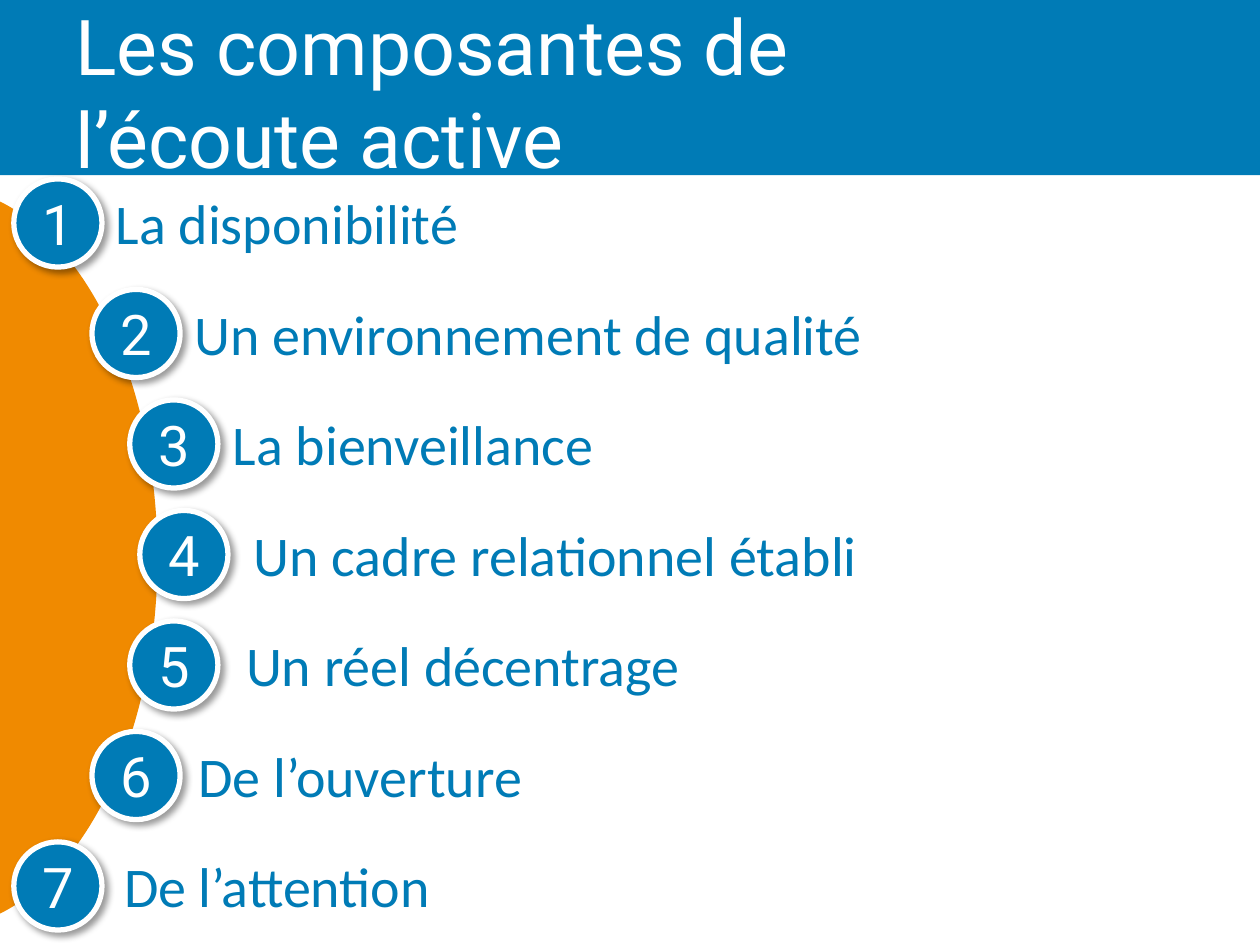
from lxml import etree
from pptx import Presentation
from pptx.dml.color import RGBColor
from pptx.enum.shapes import MSO_SHAPE
from pptx.enum.text import MSO_ANCHOR, MSO_AUTO_SIZE, PP_ALIGN
from pptx.oxml.ns import qn
from pptx.util import Inches, Pt

RECTANGLE, ELLIPSE, ARC = MSO_SHAPE.RECTANGLE, MSO_SHAPE.OVAL, MSO_SHAPE.ARC
LEFT, CENTER = PP_ALIGN.LEFT, PP_ALIGN.CENTER
TOP, MIDDLE = MSO_ANCHOR.TOP, MSO_ANCHOR.MIDDLE
GROW, FIXED = MSO_AUTO_SIZE.SHAPE_TO_FIT_TEXT, MSO_AUTO_SIZE.NONE

WIDTH, HEIGHT = Inches(10), Inches(7.5)
COLUMNS, ROWS = 100, 75
BLUE, ORANGE, WHITE, BLACK = "007BB6", "F08A00", "FFFFFF", "000000"
HEADING_FONT, BODY_FONT = "Roboto", "Calibri"

DISC_SIZE, FIRST_ROW, ROW_STEP = 7, 14.2, 8.77
LABEL_DROP, LABEL_HEIGHT = 0.3, 6.4
DISC_COLUMNS = [1.1, 7.3, 10.3, 11.1, 10.3, 7.3, 1.1]
COMPONENTS = [
    ("La disponibilité", 8.2, 29.9, LEFT),
    ("Un environnement de qualité", 14.2, 55.5, CENTER),
    ("La bienveillance", 17.5, 31.9, LEFT),
    ("Un cadre relationnel établi", 18.1, 52, CENTER),
    ("Un réel décentrage", 17.4, 38.7, CENTER),
    ("De l’ouverture", 14.5, 28.2, CENTER),
    ("De l’attention", 8.3, 27.4, CENTER),
]


def color(value):
    return RGBColor.from_string(value)


def set_all(target, values):
    for name, value in values.items():
        setattr(target, name, value)


class SlideBuilder:
    """Holds the style and the current slide, and draws on a grid."""

    def __init__(self, presentation):
        self.slide = presentation.slides.add_slide(presentation.slide_layouts[6])
        self.shapes = self.slide.shapes
        self.heading = {"name": HEADING_FONT, "size": Pt(44)}
        self.number = {"name": HEADING_FONT, "size": Pt(32)}
        self.body = {"name": BODY_FONT, "size": Pt(32)}

    def place(self, left, top, width, height):
        across, down = WIDTH / COLUMNS, HEIGHT / ROWS
        return [round(length) for length in
                (left * across, top * down, width * across, height * down)]

    def fill_text(self, shape, text, font, font_color, alignment, **frame):
        set_all(shape.text_frame, frame)
        paragraph = shape.text_frame.paragraphs[0]
        paragraph.text = text
        paragraph.alignment = alignment
        set_all(paragraph.font, font)
        paragraph.font.color.rgb = color(font_color)

    def shape(self, kind, box, fill, parent=None):
        shape = (parent or self).shapes.add_shape(kind, *self.place(*box))
        shape.shadow.inherit = False
        shape.fill.solid()
        shape.fill.fore_color.rgb = color(fill)
        shape.line.fill.background()
        return shape

    def text(self, text, box, font, font_color, alignment=LEFT, parent=None, **frame):
        shape = (parent or self).shapes.add_textbox(*self.place(*box))
        self.fill_text(shape, text, font, font_color, alignment, **frame)

    def cast_shadow(self, shape):
        effects = shape._element.spPr.find(qn("a:effectLst"))
        shadow = etree.SubElement(effects, qn("a:outerShdw"), blurRad=str(Pt(4)),
                                  dist=str(Pt(3)), dir=str(45 * 60000),
                                  algn="tl", rotWithShape="0")
        tint = etree.SubElement(shadow, qn("a:srgbClr"), val=BLACK)
        etree.SubElement(tint, qn("a:alpha"), val="40000")

    def disc(self, number, left, top, parent):
        shape = self.shape(ELLIPSE, (left, top, DISC_SIZE, DISC_SIZE), BLUE, parent)
        shape.line.color.rgb = color(WHITE)
        shape.line.width = Pt(3)
        self.cast_shadow(shape)
        self.fill_text(shape, str(number), self.number, WHITE, CENTER,
                       vertical_anchor=MIDDLE)

    def component(self, index, label, left, width, alignment):
        group = self.shapes.add_group_shape()
        top = FIRST_ROW + index * ROW_STEP
        self.text(label, (left, top + LABEL_DROP, width, LABEL_HEIGHT), self.body, BLUE,
                  alignment, group, word_wrap=alignment == CENTER, auto_size=GROW)
        self.disc(index + 1, DISC_COLUMNS[index], top, group)


def main():
    presentation = Presentation()
    set_all(presentation, {"slide_width": WIDTH, "slide_height": HEIGHT})
    builder = SlideBuilder(presentation)
    builder.shape(RECTANGLE, (0, 0, COLUMNS, 13.9), BLUE)
    builder.text("Les composantes de\vl’écoute active", (5, -1.1, 71.8, 14.3),
                 builder.heading, WHITE, word_wrap=True, auto_size=FIXED,
                 vertical_anchor=TOP, margin_top=Inches(0.1), margin_bottom=0)
    arc = builder.shape(ARC, (-22.3, 14.8, 34.8, 58.9), ORANGE)
    arc.adjustments[0], arc.adjustments[1] = 162, 53.84
    for index, component in enumerate(COMPONENTS):
        builder.component(index, *component)
    presentation.save("out.pptx")


if __name__ == "__main__":
    main()
